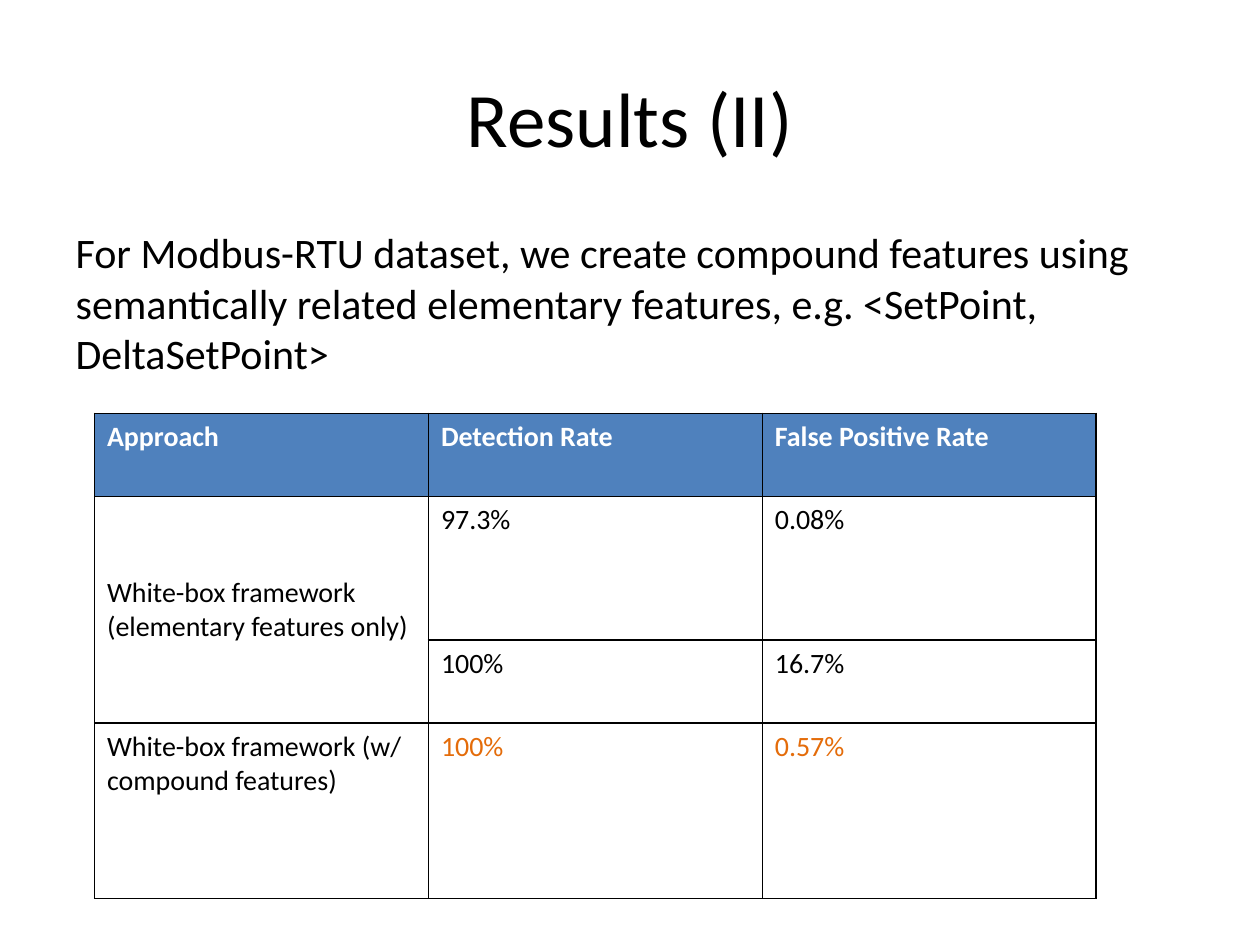
from lxml import etree
from pptx import Presentation
from pptx import util as u
from pptx.dml.color import RGBColor
from pptx.enum import text
from pptx.oxml.ns import qn

FONT = "Calibri"
BLACK, WHITE, BLUE, ORANGE = "000000", "FFFFFF", "4F81BD", "E46C0A"

COLUMN_WIDTH = 2.65
ROW_HEIGHTS = [0.66, 1.14, 0.66, 1.39]
ROWS = [
    ["Approach", "Detection Rate", "False Positive Rate"],
    ["White-box framework (elementary features only)", "97.3%", "0.08%"],
    ["", "100%", "16.7%"],
    ["White-box framework (w/ compound features)", "100%", "0.57%"],
]


def paint(target, color):
    """Set a fill to a solid colour."""
    target.solid()
    target.fore_color.rgb = RGBColor.from_string(color)


def add_span(para, words, size, color=BLACK, bold=False):
    span = para.add_run()
    span.text = words
    span.font.name = FONT
    span.font.size = u.Pt(size)
    span.font.bold = bold
    paint(span.font.fill, color)


def place(box, left, top, width, height):
    box.left, box.top = u.Inches(left), u.Inches(top)
    box.width, box.height = u.Inches(width), u.Inches(height)


def fill_title(box, words):
    place(box, 0.5, 0.3, 9, 1.25)
    box.text_frame.vertical_anchor = text.MSO_ANCHOR.MIDDLE
    para = box.text_frame.paragraphs[0]
    para.alignment = text.PP_ALIGN.CENTER
    add_span(para, words, 44)


def fill_body(box, words):
    place(box, 0.5, 1.75, 9, 4.95)
    para = box.text_frame.paragraphs[0]
    # Plain paragraph: no bullet and no hanging indent
    properties = para._p.get_or_add_pPr()
    properties.set("marL", "0")
    properties.set("indent", "0")
    etree.SubElement(properties, qn("a:buNone"))
    para.space_before = u.Pt(0)
    add_span(para, words, 24)


def add_borders(cell):
    """Draw thin black lines; they must come before the cell's fill."""
    properties = cell._tc.get_or_add_tcPr()
    for position, side in enumerate(("lnL", "lnR", "lnT", "lnB")):
        line = etree.Element(qn(f"a:{side}"), w=str(u.Pt(1)))
        solid = etree.SubElement(line, qn("a:solidFill"))
        etree.SubElement(solid, qn("a:srgbClr"), val=BLACK)
        properties.insert(position, line)


def cell_color(row, column):
    if row == 0:
        return WHITE
    return ORANGE if row == len(ROWS) - 1 and column > 0 else BLACK


def add_results_table(slide):
    columns = len(ROWS[0])
    frame = slide.shapes.add_table(
        len(ROWS), columns, u.Inches(0.75), u.Inches(3.28),
        u.Inches(COLUMN_WIDTH * columns), u.Inches(sum(ROW_HEIGHTS)))
    table = frame.table
    for column in table.columns:
        column.width = u.Inches(COLUMN_WIDTH)
    for row, height in zip(table.rows, ROW_HEIGHTS):
        row.height = u.Inches(height)

    for r, values in enumerate(ROWS):
        for c, words in enumerate(values):
            cell = table.cell(r, c)
            paint(cell.fill, BLUE if r == 0 else WHITE)
            add_borders(cell)
            if words:
                add_span(cell.text_frame.paragraphs[0], words, 16,
                         cell_color(r, c), bold=r == 0)

    # The elementary approach covers two result rows
    elementary = table.cell(1, 0)
    elementary.merge(table.cell(2, 0))
    elementary.vertical_anchor = text.MSO_ANCHOR.MIDDLE


def main():
    deck = Presentation()
    deck.slide_width, deck.slide_height = u.Inches(10), u.Inches(7.5)
    slide = deck.slides.add_slide(deck.slide_layouts[1])
    paint(slide.background.fill, WHITE)

    fill_title(slide.shapes.title, "Results (II)")
    fill_body(slide.placeholders[1],
              "For Modbus-RTU dataset, we create compound features using "
              "semantically related elementary features, e.g. <SetPoint, "
              "DeltaSetPoint>")
    add_results_table(slide)
    deck.save("out.pptx")


if __name__ == "__main__":
    main()
